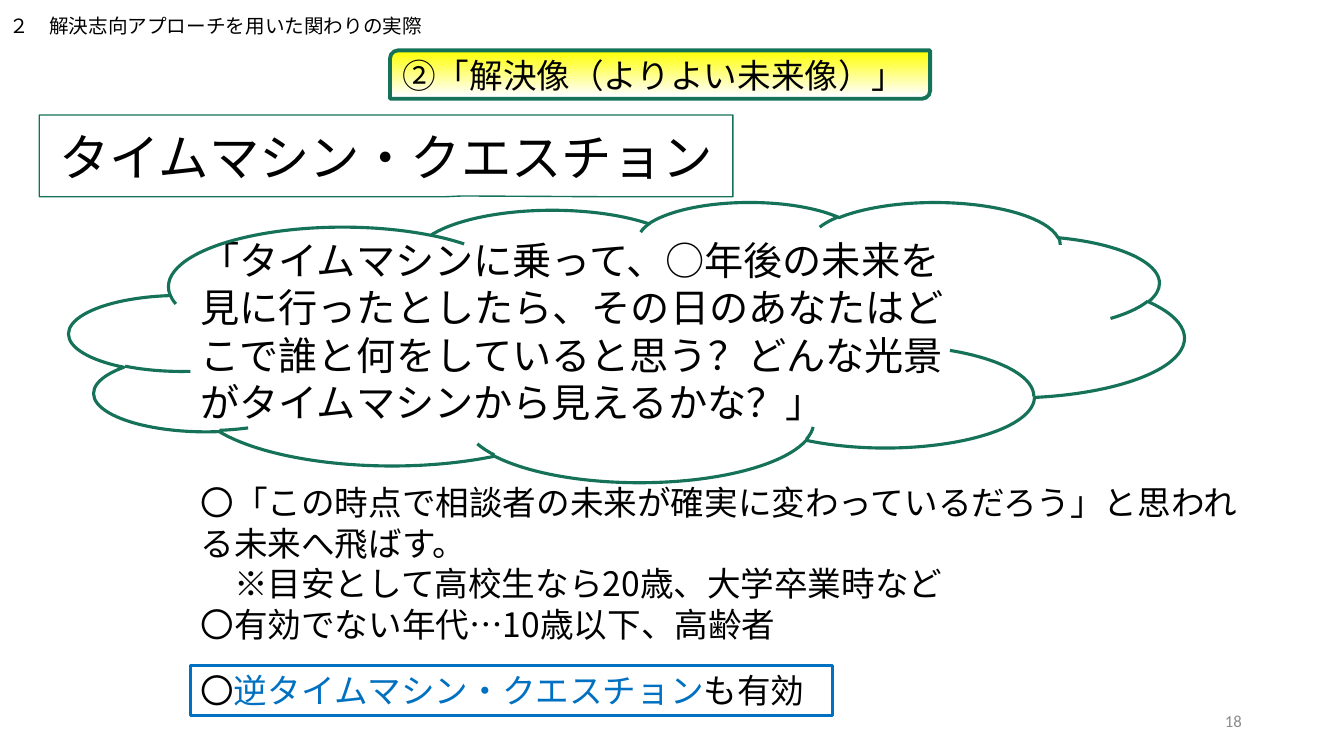
"""Build the slide on the time machine question."""
import dataclasses

import pptx
import pptx.dml.color
import pptx.enum.shapes
import pptx.enum.text
import pptx.oxml.ns
import pptx.util

Cm, Pt = pptx.util.Cm, pptx.util.Pt
Rgb = pptx.dml.color.RGBColor.from_string
Kind = pptx.enum.shapes.MSO_SHAPE
Align = pptx.enum.text.PP_ALIGN
Anchor = pptx.enum.text.MSO_ANCHOR
Fit = pptx.enum.text.MSO_AUTO_SIZE


@dataclasses.dataclass
class Theme:
    font: str = "Noto Sans CJK JP"
    latin: str = "Calibri"
    black: str = "000000"
    green: str = "157259"
    blue: str = "0070C0"
    gray: str = "8C8C8C"
    yellow: str = "FFFF00"
    white: str = "FFFFFF"
    title: int = 36
    quote: int = 28
    body: int = 24
    head: int = 14
    small: int = 12
    pitch: float = 1.21


class Deck:
    def __init__(self, theme):
        self.theme = theme
        self.file = pptx.Presentation()
        self.file.slide_width, self.file.slide_height = Cm(33.87), Cm(19.05)
        self.slide = self.file.slides.add_slide(self.file.slide_layouts[1])

    def style(self, run, size, color, font=None):
        run.font.size = Pt(size)
        run.font.name = font or self.theme.font
        run.font.color.rgb = Rgb(color)
        props = run._r.get_or_add_rPr()
        east = props.makeelement(pptx.oxml.ns.qn("a:ea"), {"typeface": self.theme.font})
        props.find(pptx.oxml.ns.qn("a:latin")).addnext(east)

    def fill(self, shape, lines, size, color=None, font=None, align=Align.LEFT, anchor=Anchor.TOP):
        frame = shape.text_frame
        frame.text = "\n".join(lines)
        frame.word_wrap = True
        frame.auto_size = Fit.NONE
        frame.vertical_anchor = anchor
        for para in frame.paragraphs:
            para.alignment = align
            para.space_before = Pt(0)
            para.line_spacing = Pt(round(size * self.theme.pitch, 1))
            for run in para.runs:
                self.style(run, size, color or self.theme.black, font)

    def place(self, shape, box):
        shape.left, shape.top, shape.width, shape.height = map(Cm, box)

    def title(self, box, text):
        shape = self.slide.shapes.title
        self.place(shape, box)
        self.fill(shape, [text], self.theme.title, align=Align.CENTER, anchor=Anchor.MIDDLE)

    def list(self, box, lines):
        shape = self.slide.placeholders[1]
        self.place(shape, box)
        self.fill(shape, lines, self.theme.body)
        for para in shape.text_frame.paragraphs:
            props = para._p.get_or_add_pPr()
            props.set("marL", "0")
            props.set("indent", "0")
            props.append(props.makeelement(pptx.oxml.ns.qn("a:buNone"), {}))

    def text(self, box, line, size, **look):
        self.fill(self.slide.shapes.add_textbox(*map(Cm, box)), [line], size, **look)

    def shape(self, kind, box, color, width):
        shape = self.slide.shapes.add_shape(kind, *map(Cm, box))
        shape.shadow.inherit = False
        shape.fill.background()
        shape.line.color.rgb = Rgb(color)
        shape.line.width = Pt(width)
        return shape

    def label(self, box, line):
        shape = self.shape(Kind.ROUND_2_DIAG_RECTANGLE, box, self.theme.green, 2.75)
        shape.fill.gradient()
        shape.fill.gradient_angle = 270
        stops = zip(shape.fill.gradient_stops, (self.theme.yellow, self.theme.white), (0, 0.94))
        for stop, color, place in stops:
            stop.color.rgb = Rgb(color)
            stop.position = place
        self.fill(shape, [line], self.theme.body, anchor=Anchor.MIDDLE)

    def frame(self, box, parts):
        shape = self.shape(Kind.RECTANGLE, box, self.theme.blue, 2.25)
        self.fill(shape, [""], self.theme.body)
        para = shape.text_frame.paragraphs[0]
        for words, color in parts:
            run = para.add_run()
            run.text = words
            self.style(run, self.theme.body, color)


def main():
    theme = Theme()
    deck = Deck(theme)
    left = 4.8
    banner = (0.99, 2.9, 17.48, 2.06)
    deck.title(banner, "タイムマシン・クエスチョン")
    deck.list((left, 12.01, 27.28, 4.37), [
        "〇「この時点で相談者の未来が確実に変わっているだろう」と思われる未来へ飛ばす。",
        "　※目安として高校生なら20歳、大学卒業時など",
        "〇有効でない年代…10歳以下、高齢者",
    ])
    deck.text((left, 5.82, 19.81, 5.05),
              "「タイムマシンに乗って、○年後の未来を見に行ったとしたら、その日のあなたは"
              "どこで誰と何をしていると思う？どんな光景がタイムマシンから見えるかな？」",
              theme.quote)
    deck.text((23.93, 17.65, 7.62, 1.02), "18", theme.small, color=theme.gray,
              font=theme.latin, align=Align.RIGHT, anchor=Anchor.MIDDLE)
    deck.frame((left, 16.76, 16.18, 1.27), [
        ("〇", theme.black),
        ("逆タイムマシン・クエスチョン", theme.blue),
        ("も有効", theme.black),
    ])
    deck.text((0, 0.23, 11.5, 0.86), "２　解決志向アプローチを用いた関わりの実際",
              theme.head, font=theme.latin)
    callout = deck.shape(Kind.RECTANGULAR_CALLOUT, banner, theme.green, 1)
    callout.adjustments[0], callout.adjustments[1] = 0.11, 0.49
    deck.shape(Kind.CLOUD, (1.75, 5.08, 28.09, 7.06), theme.green, 2.25)
    deck.label((9.83, 1.27, 13.61, 1.22), "②「解決像（よりよい未来像）」")
    deck.file.save("out.pptx")


if __name__ == "__main__":
    main()
